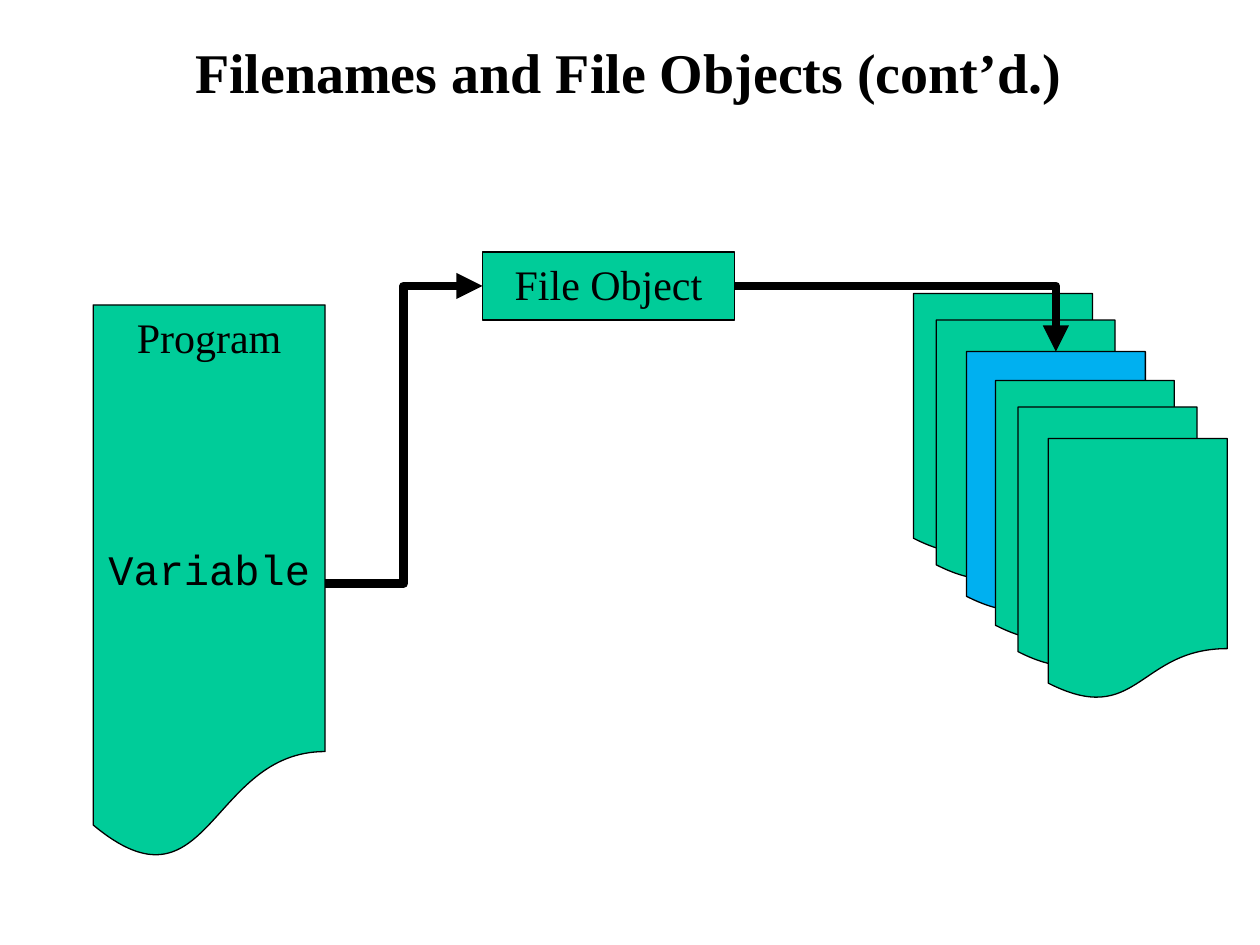
from dataclasses import dataclass
from itertools import product

from lxml.etree import SubElement
from pptx import Presentation
from pptx.dml.color import RGBColor
from pptx.enum.shapes import MSO_CONNECTOR, MSO_SHAPE as SHAPE
from pptx.enum.text import MSO_ANCHOR as ANCHOR, PP_ALIGN as ALIGN
from pptx.oxml.ns import qn
from pptx.shapes.autoshape import Shape
from pptx.slide import Slide
from pptx.util import Inches, Pt

BLACK = RGBColor(0x00, 0x00, 0x00)
GREEN = RGBColor(0x00, 0xCC, 0x99)
BLUE = RGBColor(0x00, 0xB0, 0xF0)
SERIF, MONO = "Times New Roman", "Courier New"
WIDTH, HEIGHT = Inches(10), Inches(7.5)
COL, ROW = WIDTH / 100, HEIGHT / 75
TOP, LEFT, RIGHT = 0, 1, 3


@dataclass(frozen=True)
class Line:
    text: str
    font: str = SERIF
    size: int = 24
    bold: bool = False
    before: int = 0


@dataclass(frozen=True)
class Box:
    col: float
    row: float
    cols: float
    rows: float
    shape: SHAPE = SHAPE.FLOWCHART_DOCUMENT
    fill: RGBColor = GREEN
    lines: tuple[Line, ...] = ()

    def place(self) -> tuple[int, int, int, int]:
        return (round(self.col * COL), round(self.row * ROW),
                round(self.cols * COL), round(self.rows * ROW))


def write(s: Shape, lines: tuple[Line, ...], anchor: ANCHOR) -> None:
    tf = s.text_frame
    tf.word_wrap = True
    tf.vertical_anchor = anchor
    for i, line in enumerate(lines):
        p = tf.add_paragraph() if i else tf.paragraphs[0]
        p.text = line.text
        p.alignment = ALIGN.CENTER
        if line.before:
            p.space_before = Pt(line.before)
        p.font.name = line.font
        p.font.size = Pt(line.size)
        p.font.bold = line.bold
        p.font.color.rgb = BLACK


def draw_box(slide: Slide, box: Box) -> Shape:
    s = slide.shapes.add_shape(box.shape, *box.place())
    s.shadow.inherit = False
    s.fill.solid()
    s.fill.fore_color.rgb = box.fill
    s.line.color.rgb = BLACK
    s.line.width = Pt(0.75)
    if box.lines:
        write(s, box.lines, ANCHOR.TOP)
    return s


def draw_arrow(slide: Slide, start: Shape, end: Shape, side: int, bend: str) -> None:
    c = slide.shapes.add_connector(MSO_CONNECTOR.ELBOW, 0, 0, 0, 0)
    c.begin_connect(start, RIGHT)
    c.end_connect(end, side)
    c.line.color.rgb = BLACK
    c.line.width = Pt(5)
    sp_pr = c._element.spPr
    sp_pr.find(qn("a:prstGeom")).set("prst", bend)
    SubElement(c.line._get_or_add_ln(), qn("a:tailEnd"), type="triangle")
    SubElement(sp_pr, qn("a:effectLst"))


def main() -> None:
    prs = Presentation()
    prs.slide_width, prs.slide_height = WIDTH, HEIGHT
    slide = prs.slides.add_slide(prs.slide_layouts[6])

    title = slide.shapes.add_textbox(*Box(7.4, 0.6, 85, 10.1).place())
    write(title, (Line("Filenames and File Objects (cont’d.)", size=32, bold=True),),
          ANCHOR.MIDDLE)

    groups = ((0, 0), (6.5, 6.9))
    steps = ((0, 0), (1.8, 2.1), (4.2, 4.6))
    opened = 2
    files = [
        draw_box(slide, Box(72.5 + gx + dx, 23.3 + gy + dy, 14.2, 20.8,
                            fill=BLUE if i == opened else GREEN))
        for i, ((gx, gy), (dx, dy)) in enumerate(product(groups, steps))
    ]
    program = draw_box(slide, Box(7.4, 24.2, 18.4, 44.2, lines=(
        Line("Program"), Line("Variable", MONO, before=104))))
    file_object = draw_box(slide, Box(38.3, 20, 20, 5.4, SHAPE.RECTANGLE,
                                      lines=(Line("File Object"),)))

    draw_arrow(slide, program, file_object, LEFT, "bentConnector3")
    draw_arrow(slide, file_object, files[opened], TOP, "bentConnector2")
    prs.save("out.pptx")


if __name__ == "__main__":
    main()
